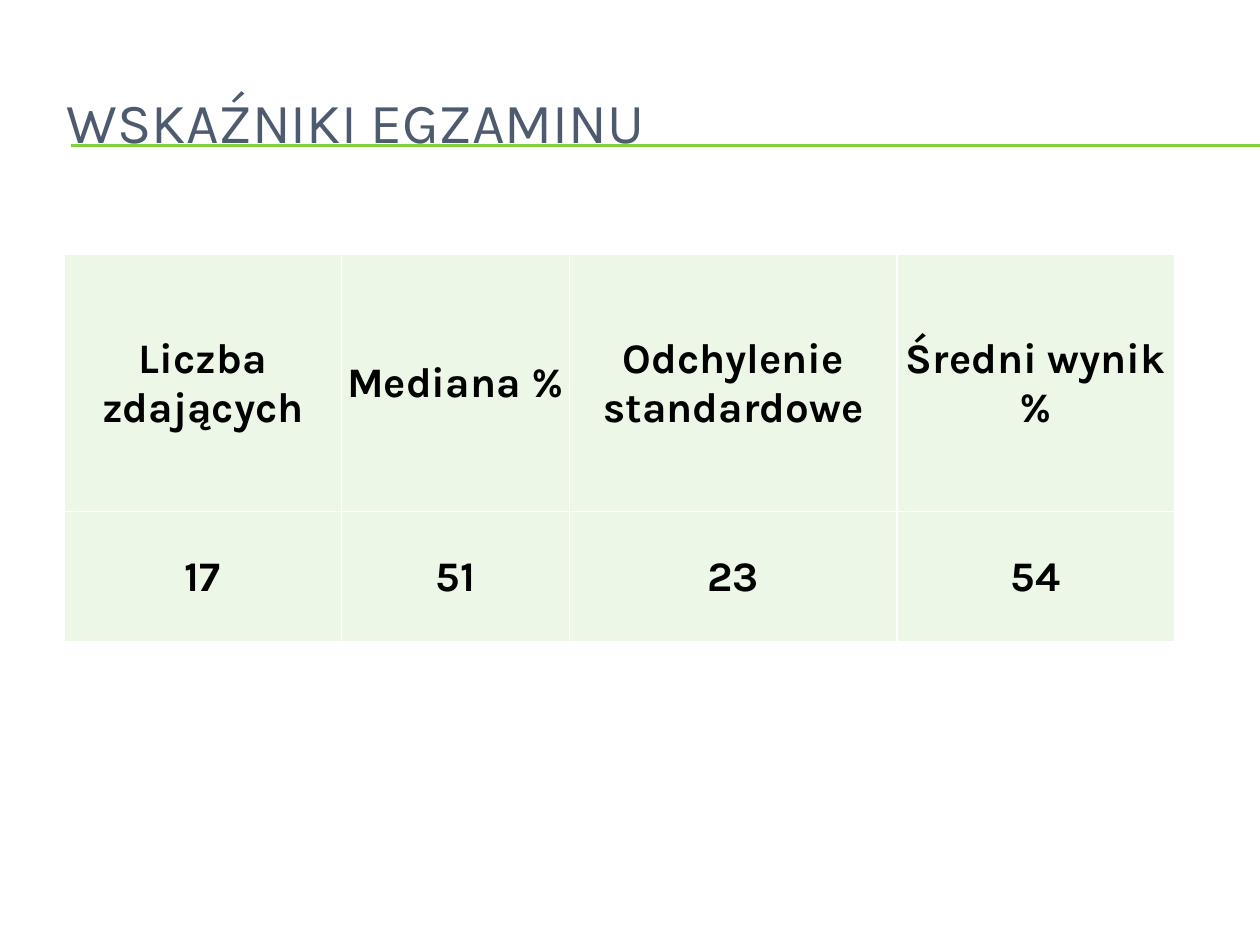
from lxml.etree import SubElement
from pptx import Presentation
from pptx.dml.color import RGBColor
from pptx.enum.shapes import MSO_CONNECTOR
from pptx.enum.text import MSO_ANCHOR, MSO_AUTO_SIZE, PP_ALIGN
from pptx.oxml import parse_xml
from pptx.oxml.ns import nsdecls, qn
from pptx.util import Inches, Pt

FONT = "Karla"
GREEN = RGBColor(0x7F, 0xD1, 0x3B)
SLATE = RGBColor(0x4E, 0x5B, 0x6F)
MINT = RGBColor(0xEC, 0xF7, 0xE8)
WHITE = RGBColor(0xFF, 0xFF, 0xFF)
BLACK = RGBColor(0, 0, 0)

COLUMNS = [2.2, 1.81, 2.6, 2.2]
ROWS = [2.04, 1.03]
INDICATORS = [
    ["Liczba zdających", "Mediana %", "Odchylenie standardowe", "Średni wynik %"],
    ["17", "51", "23", "54"],
]


def format_text(p, size, color, align, bold=False):
    p.alignment = align
    for r in p.runs:
        r.font.name = FONT
        r.font.size = Pt(size)
        r.font.bold = bold
        r.font.color.rgb = color


def add_rule(s, y):
    line = s.shapes.add_connector(
        MSO_CONNECTOR.STRAIGHT, Inches(0.56), Inches(y), Inches(10), Inches(y))
    line.line.color.rgb = GREEN
    line.line.width = Pt(0.75)
    SubElement(line._element.spPr, qn("a:effectLst"))


def set_title(s, text):
    title = s.shapes.title
    title.left, title.top = Inches(0.43), Inches(0.6)
    title.width, title.height = Inches(8.17), Inches(1.25)
    tf = title.text_frame
    tf.text = text
    tf.word_wrap = True
    tf.auto_size = MSO_AUTO_SIZE.NONE
    tf.vertical_anchor = MSO_ANCHOR.MIDDLE
    tf.margin_bottom = Inches(0.58)
    format_text(tf.paragraphs[0], 32.4, SLATE, PP_ALIGN.LEFT)


def set_borders(cell):
    tc_pr = cell._tc.get_or_add_tcPr()
    for i, side in enumerate(("lnL", "lnR", "lnT", "lnB")):
        tc_pr.insert(i, parse_xml(
            f'<a:{side} {nsdecls("a")} w="{Pt(1)}"><a:solidFill>'
            f'<a:srgbClr val="{WHITE}"/></a:solidFill></a:{side}>'))


def format_cell(cell, text):
    cell.text = text
    cell.vertical_anchor = MSO_ANCHOR.MIDDLE
    cell.margin_left = cell.margin_right = cell.margin_top = Inches(0.01)
    cell.margin_bottom = 0
    cell.fill.solid()
    cell.fill.fore_color.rgb = MINT
    format_text(cell.text_frame.paragraphs[0], 24, BLACK, PP_ALIGN.CENTER, True)
    set_borders(cell)


def add_indicators(s):
    table = s.shapes.add_table(
        len(ROWS), len(COLUMNS), Inches(0.51), Inches(2.02),
        Inches(sum(COLUMNS)), Inches(sum(ROWS))).table
    for column, width in zip(table.columns, COLUMNS):
        column.width = Inches(width)
    for row, height, texts in zip(table.rows, ROWS, INDICATORS):
        row.height = Inches(height)
        for cell, text in zip(row.cells, texts):
            format_cell(cell, text)


def main():
    prs = Presentation()
    prs.slide_width, prs.slide_height = Inches(10), Inches(7.5)
    s = prs.slides.add_slide(prs.slide_layouts[5])
    for y in (1.15, 1.16):
        add_rule(s, y)
    set_title(s, "WSKAŹNIKI EGZAMINU")
    add_indicators(s)
    prs.save("out.pptx")


if __name__ == "__main__":
    main()
